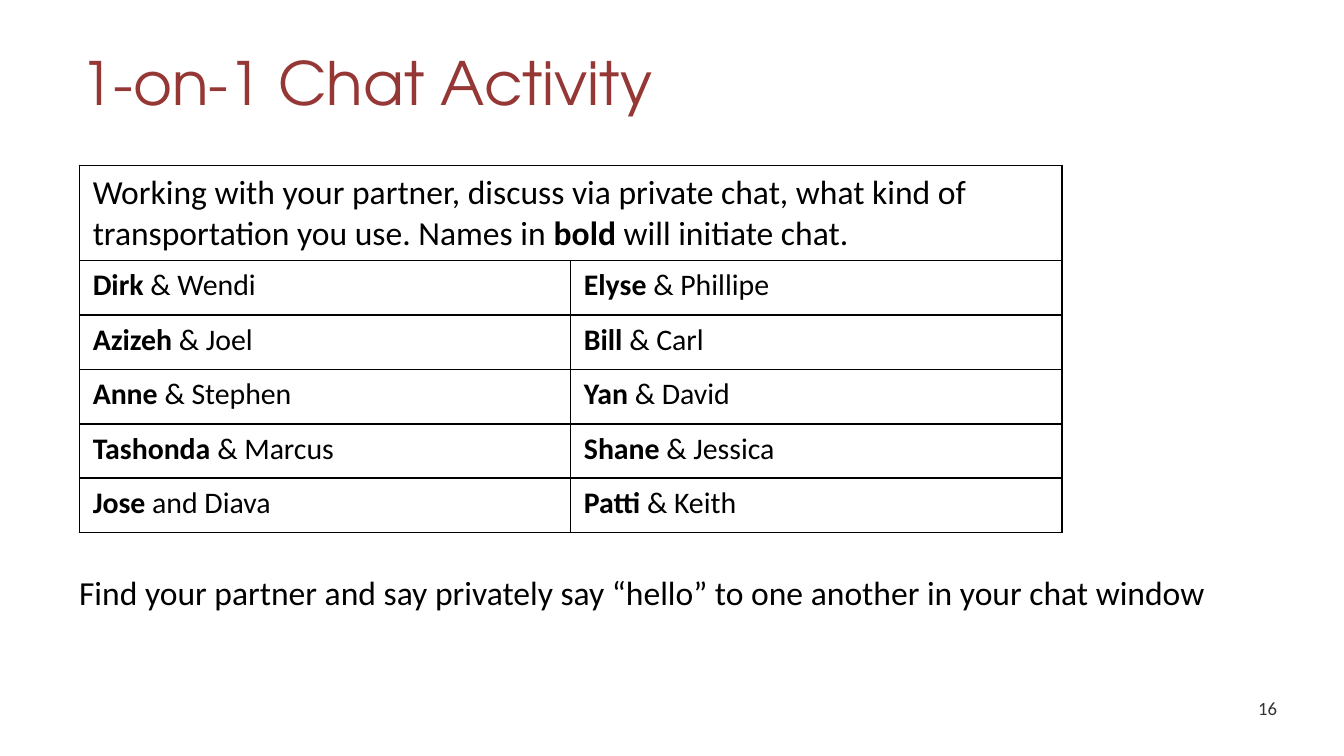
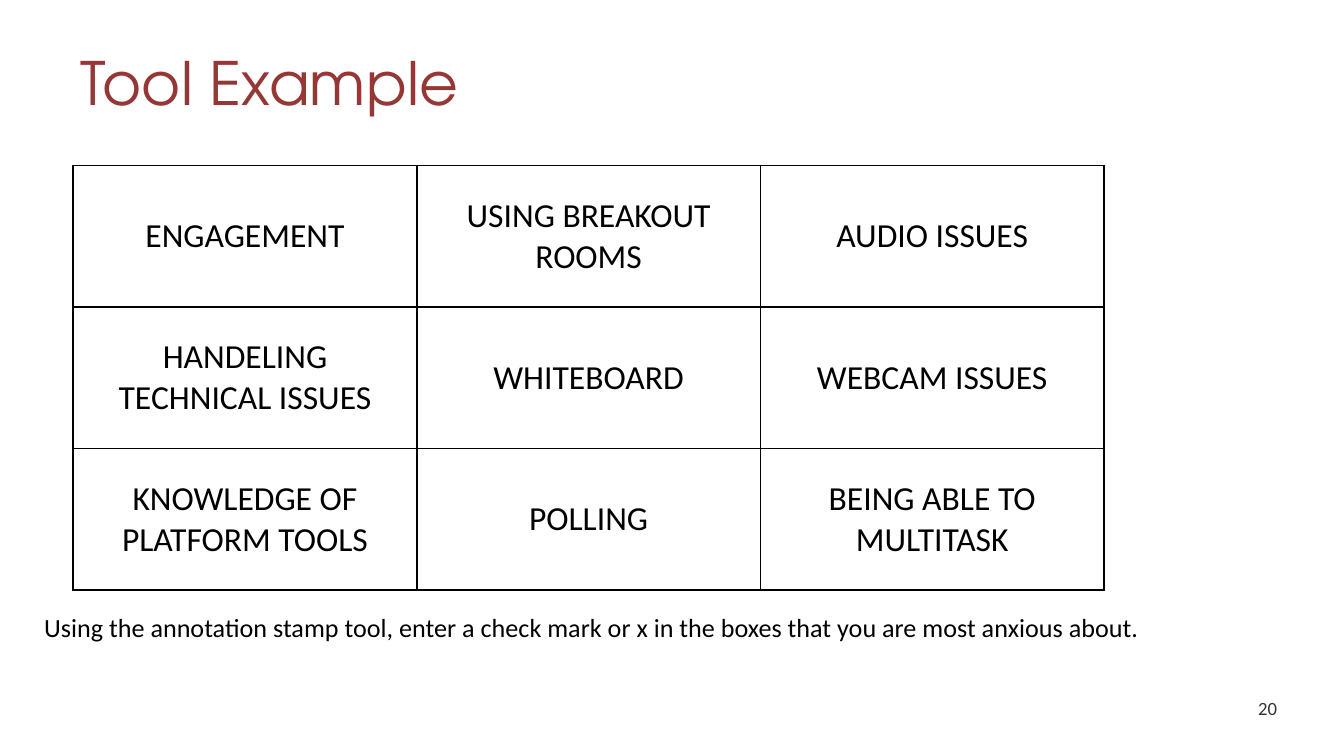
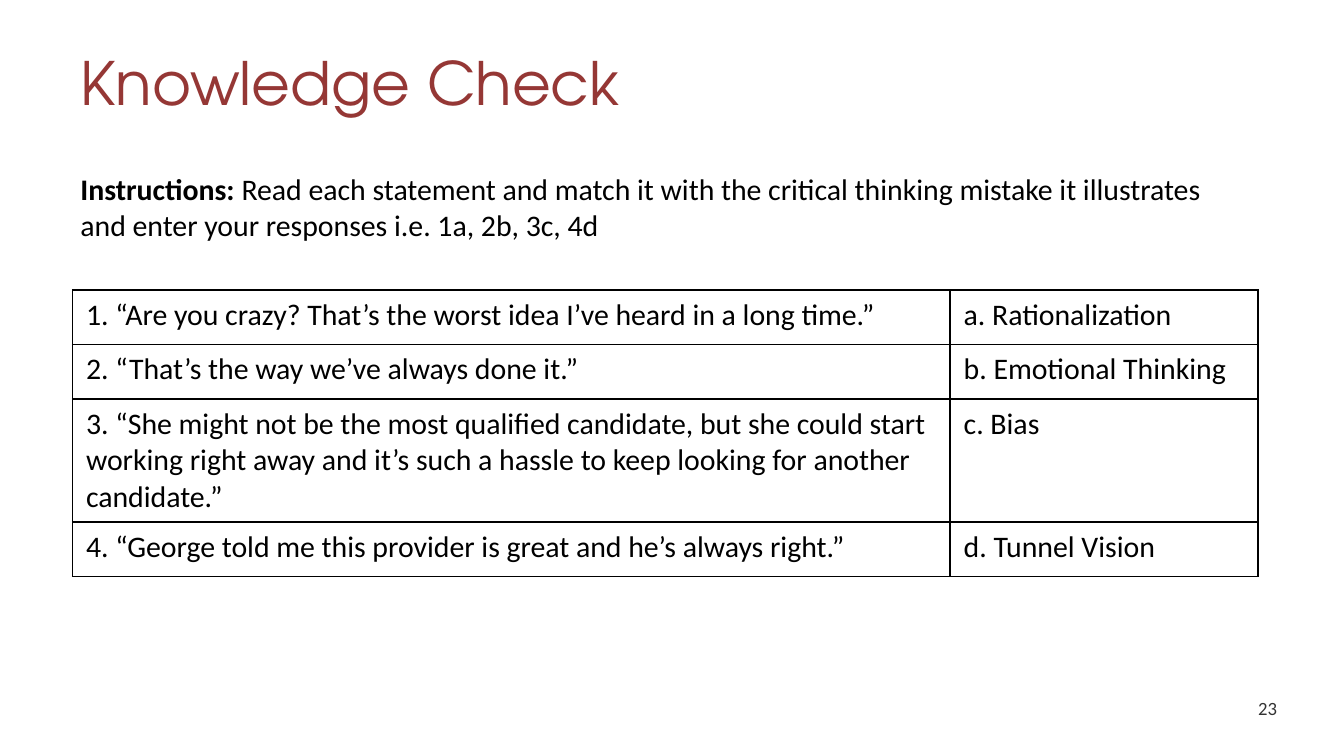
from lxml import etree
from pptx import Presentation
from pptx.dml.color import RGBColor
from pptx.enum.text import MSO_ANCHOR, PP_ALIGN
from pptx.oxml.ns import qn
from pptx.util import Inches, Pt

LEFT, CENTER, RIGHT = PP_ALIGN.LEFT, PP_ALIGN.CENTER, PP_ALIGN.RIGHT
TOP, MIDDLE = MSO_ANCHOR.TOP, MSO_ANCHOR.MIDDLE

MAROON = RGBColor(0x95, 0x37, 0x35)
BLACK = RGBColor(0x00, 0x00, 0x00)
GREY = RGBColor(0x33, 0x33, 0x33)
TITLE_FONT = "TeX Gyre Adventor"
BODY_FONT = "Calibri"

# The slide is a grid of square units, 100 columns by 56.25 rows
COLUMNS, ROWS = 100, 56.25
UNIT = Inches(10) / COLUMNS


def units(n):
    return round(n * UNIT)


class Deck:
    def __init__(self):
        self.prs = Presentation()
        self.prs.slide_width = units(COLUMNS)
        self.prs.slide_height = units(ROWS)
        self.s = None

    def slide(self, title, number):
        self.s = self.prs.slides.add_slide(self.prs.slide_layouts[6])
        self.text(title, 5, 2.3, 90, 7.5, 32, TITLE_FONT, MAROON, anchor=MIDDLE)
        self.text(str(number), 88.2, 51.2, 7.8, 3, 10, color=GREY,
                  align=RIGHT, anchor=MIDDLE)

    def add_runs(self, tf, text, size, font=BODY_FONT, color=BLACK, align=LEFT):
        """Fill a text frame; words between asterisks are bold."""
        p = tf.paragraphs[0]
        p.alignment = align
        for i, part in enumerate(text.split("*")):
            if part:
                r = p.add_run()
                r.text = part
                r.font.name, r.font.size = font, Pt(size)
                r.font.bold = i % 2 == 1
                r.font.color.rgb = color

    def text(self, text, col, row, width, height, size, font=BODY_FONT,
             color=BLACK, align=LEFT, anchor=TOP):
        box = self.s.shapes.add_textbox(*map(units, (col, row, width, height)))
        tf = box.text_frame
        tf.word_wrap = True
        tf.vertical_anchor = anchor
        self.add_runs(tf, text, size, font, color, align)

    def table(self, cells, col, row, widths, heights, size,
              align=LEFT, anchor=TOP):
        frame = self.s.shapes.add_table(
            len(heights), len(widths),
            *map(units, (col, row, sum(widths), sum(heights))))
        tbl = frame.table
        tbl.first_row = tbl.horz_banding = False
        for column, width in zip(tbl.columns, widths):
            column.width = units(width)
        for line, height in zip(tbl.rows, heights):
            line.height = units(height)
        for cell in tbl.iter_cells():
            cell.fill.background()
            cell.vertical_anchor = anchor
            self.borders(cell)
        for i, texts in enumerate(cells):
            # A single text spans the whole row
            if len(texts) == 1:
                tbl.cell(i, 0).merge(tbl.cell(i, len(widths) - 1))
            for j, text in enumerate(texts):
                # The spanning row is set slightly larger than the rest
                points = size + 2 if len(texts) == 1 else size
                self.add_runs(tbl.cell(i, j).text_frame, text, points,
                              align=align)

    def borders(self, cell):
        tc_pr = cell._tc.get_or_add_tcPr()
        for i, side in enumerate(("a:lnL", "a:lnR", "a:lnT", "a:lnB")):
            ln = etree.Element(qn(side), w=str(Pt(1)))
            fill = etree.SubElement(ln, qn("a:solidFill"))
            etree.SubElement(fill, qn("a:srgbClr"), val=str(BLACK))
            tc_pr.insert(i, ln)


def main():
    deck = Deck()

    # Chat partners
    deck.slide("1-on-1 Chat Activity", 16)
    partners = [
        ["Working with your partner, discuss via private chat, what kind of "
         "transportation you use. Names in *bold* will initiate chat."],
        ["*Dirk* & Wendi", "*Elyse* & Phillipe"],
        ["*Azizeh* & Joel", "*Bill* & Carl"],
        ["*Anne* & Stephen", "*Yan* & David"],
        ["*Tashonda* & Marcus", "*Shane* & Jessica"],
        ["*Jose* and Diava", "*Patti* & Keith"],
    ]
    deck.table(partners, 5.9, 12.3, [36.55] * 2, [7.1] + [4.05] * 5, 16)
    deck.text("Find your partner and say privately say “hello” to one another "
              "in your chat window", 4.9, 42.1, 86.8, 4, 18)

    # Stamp board
    deck.slide("Tool Example", 20)
    topics = [
        ["ENGAGEMENT", "USING BREAKOUT ROOMS", "AUDIO ISSUES"],
        ["HANDELING TECHNICAL ISSUES", "WHITEBOARD", "WEBCAM ISSUES"],
        ["KNOWLEDGE OF PLATFORM TOOLS", "POLLING", "BEING ABLE TO MULTITASK"],
    ]
    deck.table(topics, 5.45, 12.3, [25.57] * 3, [10.54] * 3, 18, CENTER, MIDDLE)
    deck.text("Using the annotation stamp tool, enter a check mark or x in the "
              "boxes that you are most anxious about.", 2.3, 45, 88.5, 3.4, 14)

    # Matching quiz
    deck.slide("Knowledge Check", 23)
    statements = [
        ["1. “Are you crazy? That’s the worst idea I’ve heard in a long time.”",
         "a. Rationalization"],
        ["2. “That’s the way we’ve always done it.”", "b. Emotional Thinking"],
        ["3. “She might not be the most qualified candidate, but she could "
         "start working right away and it’s such a hassle to keep looking for "
         "another candidate.”", "c. Bias"],
        ["4. “George told me this provider is great and he’s always right.”",
         "d. Tunnel Vision"],
    ]
    deck.table(statements, 5.4, 21.6, [65.3, 22.9], [4.05, 4.05, 9.15, 4.05], 16)
    deck.text("*Instructions: *Read each statement and match it with the "
              "critical thinking mistake it illustrates and enter your "
              "responses i.e. 1a, 2b, 3c, 4d", 5, 12.2, 87.5, 6.4, 16)

    deck.prs.save("out.pptx")


if __name__ == "__main__":
    main()
